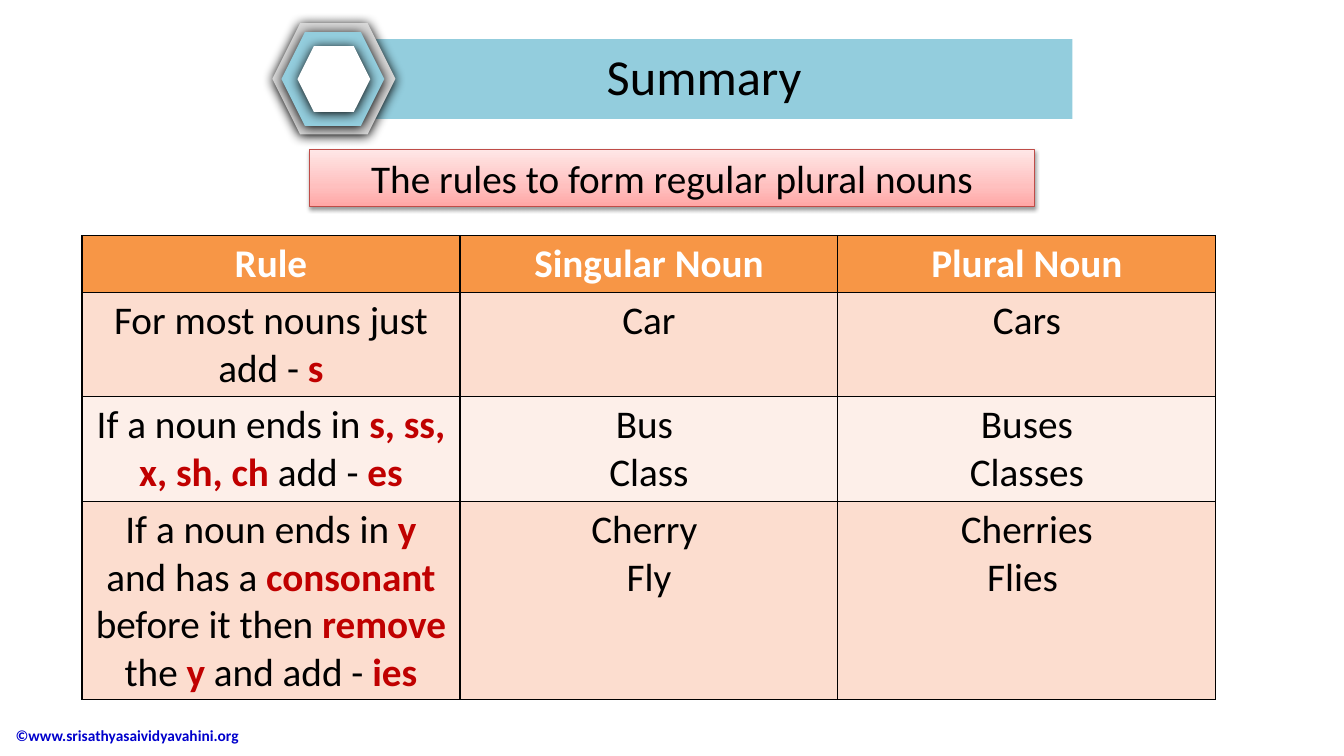
import copy
import pptx
import pptx.util
import pptx.dml.color
import pptx.enum.shapes
import pptx.enum.text
import pptx.oxml
import pptx.oxml.ns

Pt = pptx.util.Pt
Kind = pptx.enum.shapes.MSO_SHAPE
Align = pptx.enum.text.PP_ALIGN
Anchor = pptx.enum.text.MSO_ANCHOR
ns = pptx.oxml.ns

# Content: *...* marks red bold words, each cell lists its paragraphs
TITLE = "Summary"
RULES = "The rules to form regular plural nouns"
CREDIT = "©www.srisathyasaividyavahini.org"
ROWS = [
    (["Rule"], ["Singular Noun"], ["Plural Noun"]),
    (["For most nouns just add - *s*"], ["Car"], ["Cars"]),
    (["If a noun ends in *s, ss, x, sh, ch *add - *es*"],
     ["Bus ", "Class"], ["Buses", "Classes"]),
    (["If a noun ends in *y *and has a *consonant *before it then *remove*"
      " the *y* and add - *ies*"],
     ["Cherry ", "Fly"], ["Cherries", "Flies "]),
]
HIGH = [40.5, 74.5, 74.5, 141.5]
FILLS = ["F79646", "FCDDCF", "FDEFE9", "FCDDCF"]
HEXES = [
    ((194.5, 16.5, 88, 79.5), "D9D9D9"),
    ((201, 23, 73.5, 67), "93CDDD"),
    ((212.5, 33, 52, 47), "FFFFFF"),
]
STOPS = [(0, "FFA6A5"), (0.35, "FFC0BF"), (1, "FFE7E7")]


def tint(code):
    return pptx.dml.color.RGBColor.from_string(code)


def write(para, text, size, color="000000", bold=False, align=Align.CENTER):
    para.alignment = align
    for i, part in enumerate(text.split("*")):
        if part:
            run = para.add_run()
            run.text = part
            font = run.font
            font.name, font.size = "Calibri", Pt(size)
            font.bold = bold or i % 2 == 1
            font.color.rgb = tint("C00000" if i % 2 else color)


def place(item, box):
    item.left, item.top, item.width, item.height = map(Pt, box)


def draw(kind, box, fill=None):
    shape = slide.shapes.add_shape(kind, *map(Pt, box))
    shape.shadow.inherit = False
    shape.line.fill.background()
    if fill:
        shape.fill.solid()
        shape.fill.fore_color.rgb = tint(fill)
    return shape


def shade(shape, blur, drop, alpha):
    glow = pptx.oxml.parse_xml(
        f'<a:outerShdw {ns.nsdecls("a")} blurRad="{Pt(blur)}" '
        f'dist="{Pt(drop)}" dir="5400000" rotWithShape="0">'
        f'<a:srgbClr val="000000"><a:alpha val="{alpha * 1000}"/>'
        '</a:srgbClr></a:outerShdw>')
    shape._element.spPr.find(ns.qn("a:effectLst")).append(glow)


def edge(cell):
    props = cell._tc.get_or_add_tcPr()
    for i, side in enumerate(("lnL", "lnR", "lnT", "lnB")):
        props.insert(i, pptx.oxml.parse_xml(
            f'<a:{side} {ns.nsdecls("a")} w="{Pt(1)}"><a:solidFill>'
            f'<a:srgbClr val="000000"/></a:solidFill></a:{side}>'))


deck = pptx.Presentation()
deck.slide_width, deck.slide_height = Pt(960), Pt(540)
slide = deck.slides.add_slide(deck.slide_layouts[5])

# Title band with nested hexagons
draw(Kind.RECTANGLE, (240.5, 28, 525.5, 57), "93CDDD")
for box, fill in HEXES:
    shade(draw(Kind.HEXAGON, box, fill), 8.5, 1, 100)

# Title, moved in front of the band
title = slide.shapes.title
place(title, (425.5, 28, 155, 51))
frame = title.text_frame
frame.word_wrap = False
frame.auto_size = pptx.enum.text.MSO_AUTO_SIZE.NONE
frame.vertical_anchor = Anchor.MIDDLE
write(frame.paragraphs[0], TITLE, 36)
slide.shapes._spTree.append(title._element)

# Gradient banner
banner = draw(Kind.RECTANGLE, (221, 106.5, 518, 41))
banner.fill.gradient()
banner.fill.gradient_angle = 90
stops = banner._element.spPr.find(".//" + ns.qn("a:gsLst"))
stops.insert(1, copy.deepcopy(stops[0]))
for stop, (spot, code) in zip(banner.fill.gradient_stops, STOPS):
    stop.position = spot
    stop.color.rgb = tint(code)
banner.line.color.rgb = tint("BF4C48")
banner.line.width = Pt(0.75)
shade(banner, 3.1, 1.6, 38)
banner.text_frame.vertical_anchor = Anchor.MIDDLE
write(banner.text_frame.paragraphs[0], RULES, 28)

# Table of rules
table = slide.shapes.add_table(
    len(ROWS), 3, Pt(58.5), Pt(168.5), Pt(810), Pt(sum(HIGH))).table
for r, row in enumerate(ROWS):
    table.rows[r].height = Pt(HIGH[r])
    for c, lines in enumerate(row):
        cell = table.cell(r, c)
        cell.margin_top, cell.margin_bottom = Pt(3.4), Pt(1.4)
        cell.fill.solid()
        cell.fill.fore_color.rgb = tint(FILLS[r])
        edge(cell)
        frame = cell.text_frame
        for i, line in enumerate(lines):
            para = frame.add_paragraph() if i else frame.paragraphs[0]
            write(para, line, 28, "000000" if r else "FFFFFF", r == 0)

# Credit line
credit = slide.shapes.add_textbox(Pt(4), Pt(511), Pt(254), Pt(29))
credit.text_frame.word_wrap = True
credit.text_frame.vertical_anchor = Anchor.MIDDLE
write(credit.text_frame.paragraphs[0], CREDIT, 11, "0000CC", True, Align.LEFT)

deck.save("out.pptx")
